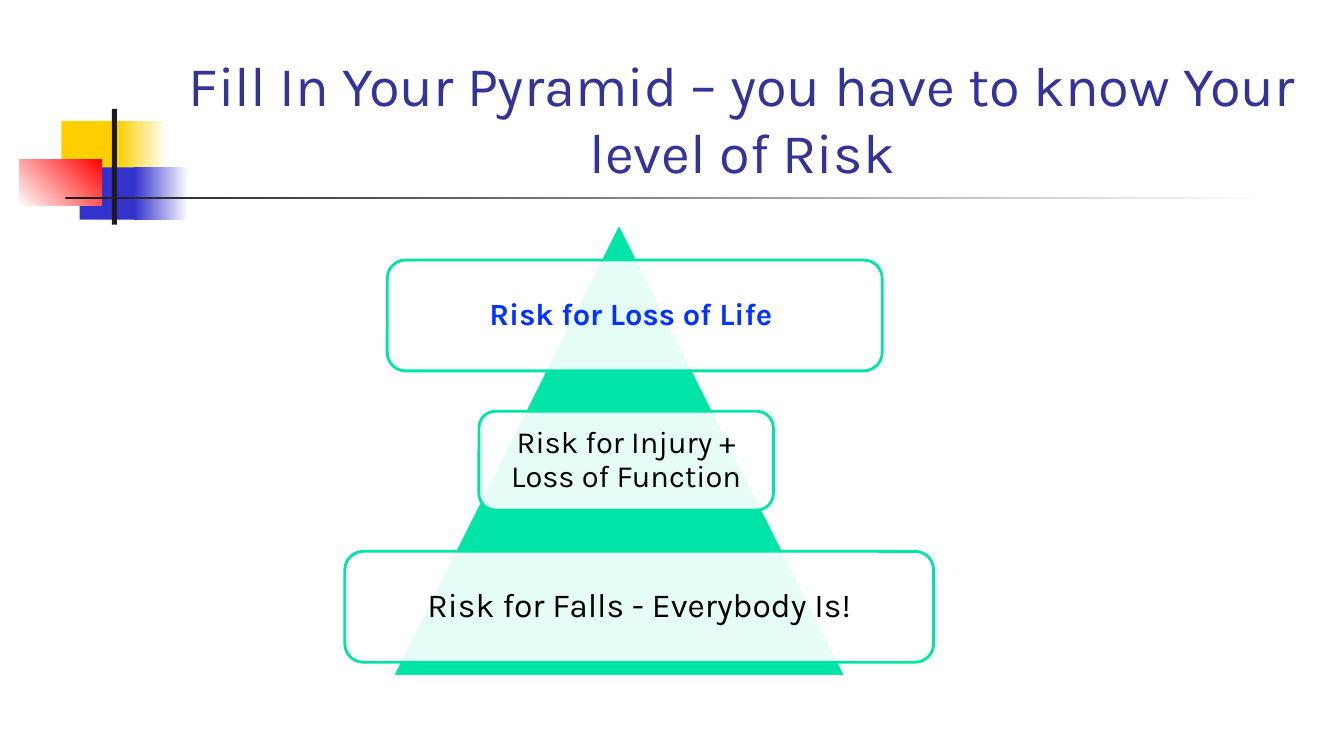
import pptx
import pptx.util
import pptx.dml.color
import pptx.enum.shapes
import pptx.enum.text
import pptx.oxml.ns
import lxml.etree

PX = 9144  # EMU per px, 100 px to the inch
FONT = "Karla"
COLORS = {
    "white": "FFFFFF", "black": "000000", "ink": "1C1C1C",
    "yellow": "FFCF01", "blue": "3333CC", "red": "FF0000",
    "title": "333399", "green": "00E4A8", "accent": "0432FF",
}
SHAPES = pptx.enum.shapes.MSO_SHAPE
ANCHORS = pptx.enum.text.MSO_ANCHOR


def rgb(name):
    return pptx.dml.color.RGBColor.from_string(COLORS[name])


def emu(*lengths):
    return [length * PX for length in lengths]


def add_shape(page, kind, box, color, line=None):
    shape = page.shapes.add_shape(kind, *emu(*box))
    shape.shadow.inherit = False
    shape.fill.solid()
    shape.fill.fore_color.rgb = rgb(color)
    if line:
        shape.line.color.rgb = rgb(line)
        shape.line.width = pptx.util.Pt(2)
    else:
        shape.line.fill.background()
    return shape


def add_fade(page, box, start, end, angle=0):
    shape = add_shape(page, SHAPES.RECTANGLE, box, start)
    shape.fill.gradient()
    shape.fill.gradient_angle = angle
    for stop, color in zip(shape.fill.gradient_stops, (start, end)):
        stop.color.rgb = rgb(color)


def write_text(shape, text, size, color, anchor, bold=False, inset=10, spacing=1.0):
    frame = shape.text_frame
    frame.word_wrap = True
    frame.vertical_anchor = anchor
    frame.margin_left = frame.margin_right = inset * PX
    frame.margin_top = frame.margin_bottom = inset * PX
    para = frame.paragraphs[0]
    para.alignment = pptx.enum.text.PP_ALIGN.CENTER
    para.line_spacing = spacing
    span = para.add_run()
    span.text = text
    span.font.name = FONT
    span.font.size = pptx.util.Pt(size)
    span.font.bold = bold
    span.font.color.rgb = rgb(color)


def add_ornament(page, left, top):
    # Coloured blocks, each solid part fading out to the right
    add_shape(page, SHAPES.RECTANGLE, (left + 42, top + 12, 64, 52), "yellow")
    add_fade(page, (left + 98, top + 12, 48, 52), "yellow", "white")
    add_shape(page, SHAPES.RECTANGLE, (left + 60, top + 58, 62, 52), "blue")
    add_fade(page, (left + 114, top + 58, 54, 52), "blue", "white")
    add_fade(page, (left, top + 50, 82, 46), "white", "red", 45)
    # Crossing bars
    add_shape(page, SHAPES.RECTANGLE, (left + 92, top, 5, 115), "ink")
    add_fade(page, (left + 46, top + 87, 1200, 3), "ink", "white")


def add_title(page, box):
    title = page.shapes.add_textbox(*emu(*box))
    write_text(title, "Fill In Your Pyramid – you have to know Your level of Risk",
               40, "title", ANCHORS.BOTTOM)


def add_card(page, box, text, size, color, bold):
    card = add_shape(page, SHAPES.ROUNDED_RECTANGLE, box, "white", "green")
    # Let the pyramid show faintly through the card
    fill_color = card.fill._xPr.find(".//" + pptx.oxml.ns.qn("a:srgbClr"))
    alpha = lxml.etree.SubElement(fill_color, pptx.oxml.ns.qn("a:alpha"))
    alpha.set("val", "90000")
    write_text(card, text, size, color, ANCHORS.MIDDLE, bold, inset=9, spacing=0.9)


def add_pyramid(page, left, top, side):
    add_shape(page, SHAPES.ISOSCELES_TRIANGLE, (left, top, side, side), "green", "white")
    # Offset from the pyramid, size, wording and style of each level
    levels = [
        (-5, 37, 491, 110, "Risk for Loss of Life ", 22, "accent", True),
        (86, 187, 292, 98, "Risk for Injury + Loss of Function", 22, "black", False),
        (-47, 326, 584, 110, "Risk for Falls - Everybody Is!", 24, "black", False),
    ]
    for across, down, width, height, *label in levels:
        add_card(page, (left + across, top + down, width, height), *label)


def main():
    deck = pptx.Presentation()
    deck.slide_width, deck.slide_height = emu(1333, 750)
    page = deck.slides.add_slide(deck.slide_layouts[6])
    add_ornament(page, 19, 108)
    add_title(page, (168, 68, 1136, 125))
    add_pyramid(page, 389, 221, 450)
    deck.save("out.pptx")


if __name__ == "__main__":
    main()
